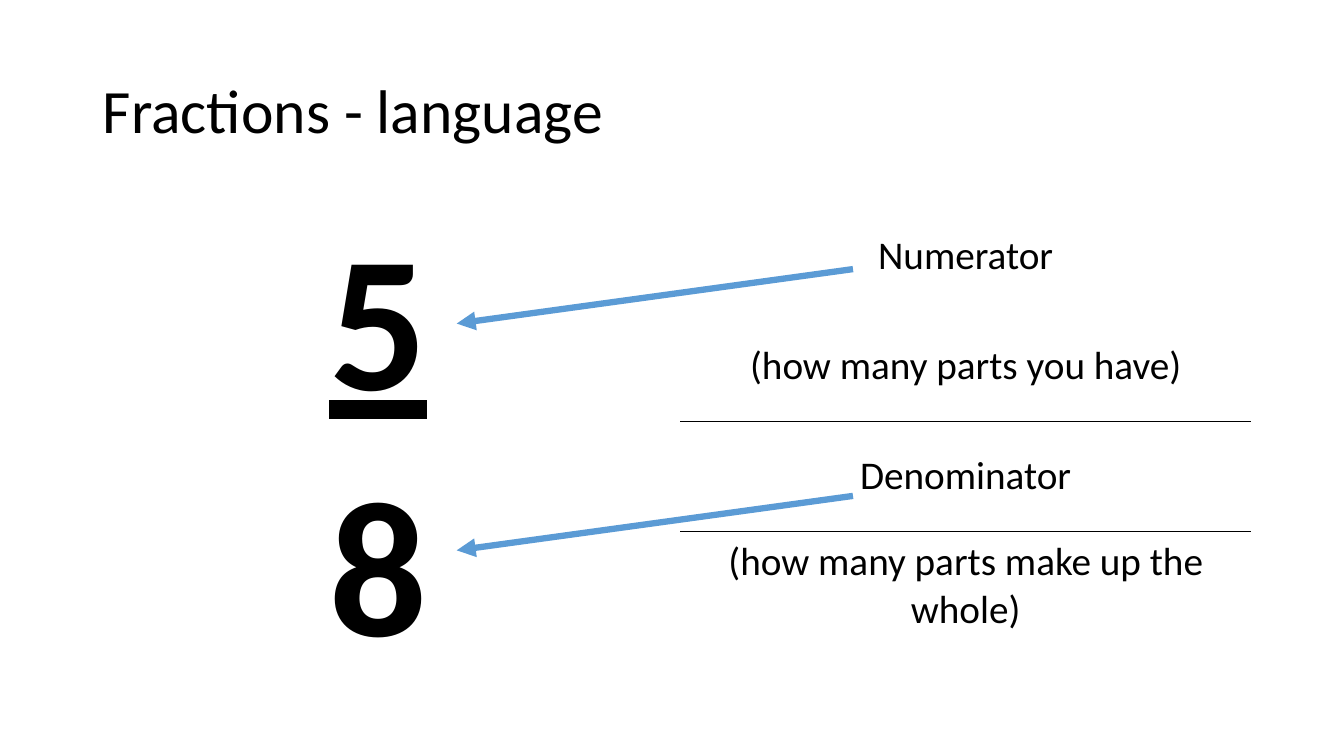
"""Builds a slide naming the numerator and the denominator of a fraction."""
import pptx
import pptx.dml.color
import pptx.enum.shapes
import pptx.enum.text
import pptx.oxml
import pptx.oxml.ns
import pptx.util

TITLE = "Fractions - language"
FRACTION = ["5", "8"]
MEANINGS = [
    "Numerator",
    "(how many parts you have)",
    "Denominator",
    "(how many parts make up the whole)",
]
RULED_ROWS = [1, 2]
COLORS = {"text": "000000", "arrow": "5B9BD5"}
FONT = "Calibri"
NO_GRID_STYLE = "{2D5ABB26-0587-4C30-8999-92F81FD0307C}"

WIDTH, HEIGHT = 13.33, 7.5
MARGIN, GAP, TABLE_TOP = 0.92, 0.16, 2
COLUMN = (WIDTH - 2 * MARGIN - GAP) / 2
FRACTION_ROW, MEANING_ROW = 2.4, 1.09
ARROW_START, ARROW_END = (8.46, 2.67), (4.53, 3.21)
ARROW_STEP = 2.25

Inches = pptx.util.Inches


def rgb(name):
    return pptx.dml.color.RGBColor.from_string(COLORS[name])


def format_font(font, **values):
    for key, value in {"name": FONT, **values}.items():
        setattr(font, key, value)
    font.color.rgb = rgb("text")


def append_xml(parent, tag, inner="", attributes=""):
    namespace = pptx.oxml.ns.nsdecls("a")
    parent.append(pptx.oxml.parse_xml(f"<a:{tag} {namespace} {attributes}>{inner}</a:{tag}>"))


def add_column(slide, left, row_height, entries, **font_values):
    frame = slide.shapes.add_table(
        len(entries), 1, Inches(left), Inches(TABLE_TOP),
        Inches(COLUMN), Inches(row_height * len(entries)))
    table = frame.table
    table.first_row = table.horz_banding = False
    table._tbl.tblPr.find(pptx.oxml.ns.qn("a:tableStyleId")).text = NO_GRID_STYLE
    for row, entry in enumerate(entries):
        cell = table.cell(row, 0)
        cell.text = entry
        cell.vertical_anchor = pptx.enum.text.MSO_ANCHOR.MIDDLE
        paragraph = cell.text_frame.paragraphs[0]
        paragraph.alignment = pptx.enum.text.PP_ALIGN.CENTER
        format_font(paragraph.runs[0].font, **font_values)
    return table


def rule_below(table, row):
    line = f'<a:solidFill><a:srgbClr val="{COLORS["text"]}"/></a:solidFill>'
    for index, side in ((row, "lnB"), (row + 1, "lnT")):
        properties = table.cell(index, 0)._tc.get_or_add_tcPr()
        append_xml(properties, side, line, 'w="12700"')


def add_arrow(slide, drop):
    points = [Inches(v) for x, y in (ARROW_START, ARROW_END) for v in (x, y + drop)]
    arrow = slide.shapes.add_connector(pptx.enum.shapes.MSO_CONNECTOR.STRAIGHT, *points)
    arrow.line.color.rgb = rgb("arrow")
    arrow.line.width = pptx.util.Pt(4.5)
    append_xml(arrow.line._get_or_add_ln(), "tailEnd", attributes='type="triangle"')
    append_xml(arrow._element.spPr, "effectLst")


def main():
    deck = pptx.Presentation()
    deck.slide_width, deck.slide_height = Inches(WIDTH), Inches(HEIGHT)
    slide = deck.slides.add_slide(deck.slide_layouts[5])

    title = slide.shapes.title
    box = {"left": MARGIN, "top": 0.4, "width": WIDTH - 2 * MARGIN, "height": 1.45}
    for key, value in box.items():
        setattr(title, key, Inches(value))
    title.text_frame.text = TITLE
    title.text_frame.vertical_anchor = pptx.enum.text.MSO_ANCHOR.MIDDLE
    heading = title.text_frame.paragraphs[0]
    heading.alignment = pptx.enum.text.PP_ALIGN.LEFT
    heading.line_spacing = 0.9
    format_font(heading.runs[0].font, size=pptx.util.Pt(44))

    fraction = add_column(slide, MARGIN, FRACTION_ROW, FRACTION,
                          size=pptx.util.Pt(138), bold=True)
    fraction.cell(0, 0).text_frame.paragraphs[0].runs[0].font.underline = True
    meanings = add_column(slide, MARGIN + COLUMN + GAP, MEANING_ROW, MEANINGS,
                          size=pptx.util.Pt(28))
    for row in RULED_ROWS:
        rule_below(meanings, row)
    for part in range(len(FRACTION)):
        add_arrow(slide, part * ARROW_STEP)

    deck.save("out.pptx")


if __name__ == "__main__":
    main()
